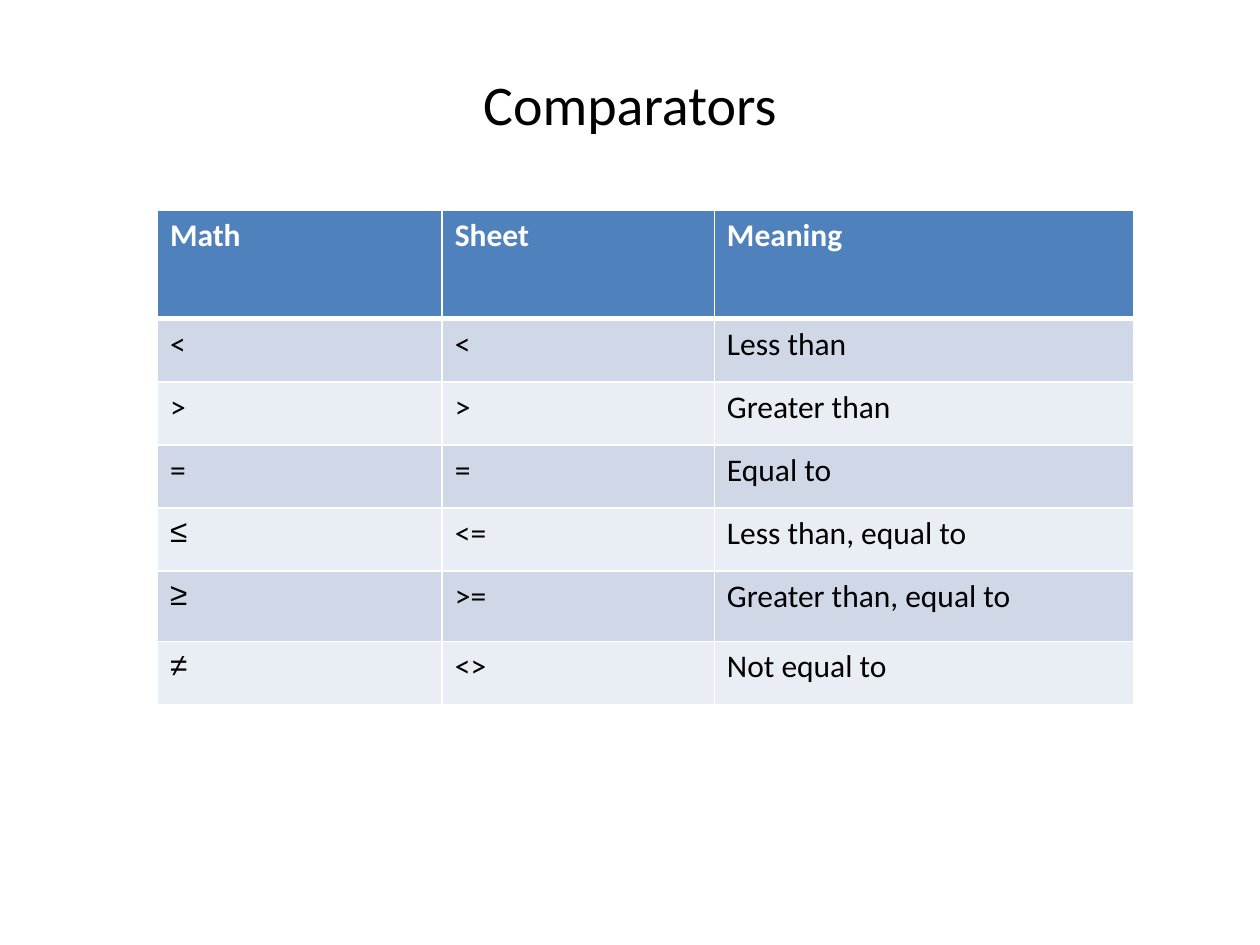
from typing import NamedTuple

from lxml import etree
from pptx import Presentation
from pptx.dml.color import RGBColor
from pptx.enum.text import MSO_ANCHOR, PP_ALIGN
from pptx.oxml.ns import qn
from pptx.util import Inches, Pt

MID = MSO_ANCHOR.MIDDLE
TOP = MSO_ANCHOR.TOP
LEFT = PP_ALIGN.LEFT
CENTER = PP_ALIGN.CENTER
WIDE, HIGH = Inches(10), Inches(7.5)
WHITE, BLACK, BLUE = "FFFFFF", "000000", "4F81BD"
BANDS = ("D0D8E8", "E9EDF4")
COLS = (2.26, 2.16, 3.33)
SIDES = ("L", "R", "T", "B")


class Row(NamedTuple):
    math: str
    sheet: str
    meaning: str
    height: float = 0.5
    face: str = "Calibri"


HEAD = Row("Math", "Sheet", "Meaning", height=0.86)
ROWS = (
    Row("<", "<", "Less than"),
    Row(">", ">", "Greater than"),
    Row("=", "=", "Equal to"),
    Row("≤", "<=", "Less than, equal to", face="Arial"),
    Row("≥", ">=", "Greater than, equal to", height=0.56, face="Arial"),
    Row("≠", "<>", "Not equal to", face="Arial"),
)


def color(code: str) -> RGBColor:
    return RGBColor.from_string(code)


def write(frame, text: str, size: float = 18, face: str = "Calibri",
          ink: str = BLACK, bold: bool = False, align=LEFT, anchor=TOP) -> None:
    frame.word_wrap = True
    frame.vertical_anchor = anchor
    para = frame.paragraphs[0]
    para.alignment = align
    run = para.add_run()
    run.text = text
    font = run.font
    font.size, font.name, font.bold = Pt(size), face, bold
    font.color.rgb = color(ink)


def edge(cell, widths: dict[str, float]) -> None:
    props = cell._tc.get_or_add_tcPr()
    for side in SIDES:
        line = etree.SubElement(props, qn(f"a:ln{side}"), w=str(Pt(widths.get(side, 1))))
        fill = etree.SubElement(line, qn("a:solidFill"))
        etree.SubElement(fill, qn("a:srgbClr"), val=WHITE)


def draw_row(table, index: int, row: Row) -> None:
    head = index == 0
    table.rows[index].height = Inches(row.height)
    for col, text in enumerate((row.math, row.sheet, row.meaning)):
        cell = table.cell(index, col)
        edge(cell, {"B": 3} if head else {"T": 3} if index == 1 else {})
        cell.fill.solid()
        cell.fill.fore_color.rgb = color(BLUE if head else BANDS[(index - 1) % 2])
        write(cell.text_frame, text, bold=head, ink=WHITE if head else BLACK,
              face=row.face if col == 0 else "Calibri")


def draw_table(slide, rows: tuple[Row, ...]) -> None:
    frame = slide.shapes.add_table(
        len(rows), len(COLS), int(WIDE * 0.125), Inches(1.67),
        Inches(sum(COLS)), Inches(sum(row.height for row in rows)))
    table = frame.table
    for col, width in zip(table.columns, COLS):
        col.width = Inches(width)
    for index, row in enumerate(rows):
        draw_row(table, index, row)


def draw_title(slide, text: str) -> None:
    title = slide.shapes.title
    title.left, title.top = int(WIDE * 0.05), int(HIGH * 0.04)
    title.width, title.height = int(WIDE * 0.9), Inches(1.03)
    write(title.text_frame, text, size=32, align=CENTER, anchor=MID)


def main() -> None:
    deck = Presentation()
    deck.slide_width, deck.slide_height = WIDE, HIGH
    slide = deck.slides.add_slide(deck.slide_layouts[5])
    draw_title(slide, "Comparators")
    draw_table(slide, (HEAD, *ROWS))
    deck.save("out.pptx")


if __name__ == "__main__":
    main()
